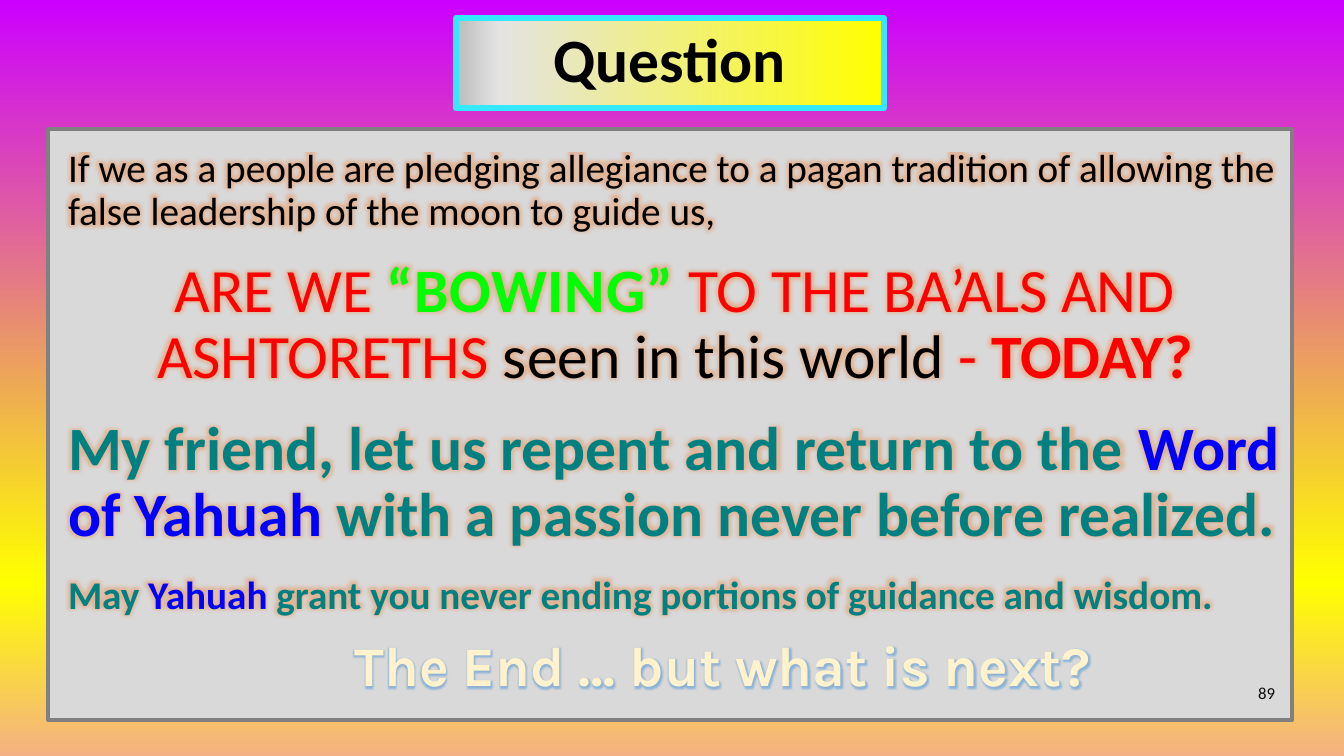
"""Build the closing question slide."""
import pptx
import pptx.util
import pptx.dml.color
import pptx.enum.shapes
import pptx.enum.text
import pptx.oxml
import pptx.oxml.ns

HUES = {
    "black": "000000", "red": "FF0000", "green": "00FF00", "teal": "008080",
    "blue": "0000FF", "cream": "FFF2CC", "ink": "0D0D0D", "panel": "D9D9D9",
    "edge": "808080", "cyan": "34E9FC", "yellow": "FFFF00", "pale": "E4E3E3",
    "silver": "BDBCBC", "violet": "CC00FF", "peach": "F4B183",
    "ember": "ED7D31", "sky": "5B9BD5",
}
ALIGN = pptx.enum.text.PP_ALIGN
ANCHOR = pptx.enum.text.MSO_ANCHOR
FIT = pptx.enum.text.MSO_AUTO_SIZE
NS = pptx.oxml.ns.nsdecls("a")

BODY = [
    (ALIGN.LEFT, 28, [
        ("If we as a people are pledging allegiance to a pagan tradition of "
         "allowing the false leadership of the moon to guide us,", "black", False)]),
    (ALIGN.CENTER, 44, [
        ("ARE WE ", "red", False),
        ("“BOWING” ", "green", True),
        ("TO THE BA’ALS AND ASHTORETHS ", "red", False),
        ("seen in this world", "black", False),
        (" - ", "red", False),
        ("TODAY?", "red", True)]),
    (ALIGN.LEFT, 44, [
        ("My friend, let us repent and return to the ", "teal", True),
        ("Word of Yahuah ", "blue", True),
        ("with a passion never before realized.", "teal", True)]),
    (ALIGN.LEFT, 28, [
        ("May ", "teal", True),
        ("Yahuah", "blue", True),
        (" grant you never ending portions of guidance and wisdom.", "teal", True)]),
]


def px(num):
    """Turn pixels into EMU."""
    return round(num * 914400 / 100.8)


def tint(name):
    """Give the named colour."""
    return pptx.dml.color.RGBColor.from_string(HUES[name])


def blend(fill, stops, angle):
    """Fill with a linear gradient of any number of stops."""
    fill.gradient()
    grad = fill._fill._gradFill
    marks = "".join(
        f'<a:gs pos="{pos * 1000}"><a:srgbClr val="{HUES[name]}"/></a:gs>'
        for pos, name in stops)
    new = pptx.oxml.parse_xml(
        f'<a:gradFill {NS} rotWithShape="1"><a:gsLst>{marks}</a:gsLst>'
        f'<a:lin ang="{angle * 60000}" scaled="0"/></a:gradFill>')
    grad[:] = list(new)


def place(shape, left, top, width, height):
    """Move and size a shape in pixels."""
    shape.left, shape.top = px(left), px(top)
    shape.width, shape.height = px(width), px(height)


def edge(shape, name, points):
    """Draw the border of a shape."""
    shape.line.color.rgb = tint(name)
    shape.line.width = pptx.util.Pt(points)


def add_run(para, text, size, name, bold=False, face="Calibri"):
    """Add one formatted run."""
    run = para.add_run()
    run.text = text
    run.font.size = pptx.util.Pt(size)
    run.font.name = face
    run.font.bold = bold
    run.font.color.rgb = tint(name)
    return run


def glow(run, name, points, alpha):
    """Put a soft glow round the letters."""
    props = run.font._element
    props.find(pptx.oxml.ns.qn("a:solidFill")).addnext(pptx.oxml.parse_xml(
        f'<a:effectLst {NS}><a:glow rad="{points * 12700}">'
        f'<a:srgbClr val="{HUES[name]}"><a:alpha val="{alpha * 1000}"/>'
        '</a:srgbClr></a:glow></a:effectLst>'))


def trace(run, name, points):
    """Outline and space out the letters."""
    props = run.font._element
    props.set("spc", "50")
    props.insert(0, pptx.oxml.parse_xml(
        f'<a:ln {NS} w="{round(points * 12700)}"><a:solidFill>'
        f'<a:srgbClr val="{HUES[name]}"/></a:solidFill></a:ln>'))


def add_title(slide):
    """Format the title box."""
    title = slide.shapes.title
    place(title, 456, 18, 428, 90)
    blend(title.fill, [(0, "yellow"), (90, "pale"), (100, "silver")], 180)
    edge(title, "cyan", 4.5)
    frame = title.text_frame
    frame.auto_size = FIT.NONE
    frame.vertical_anchor = ANCHOR.MIDDLE
    para = frame.paragraphs[0]
    para.alignment = ALIGN.CENTER
    para.line_spacing = 0.9
    add_run(para, "Question", 44, "black", True)


def add_panel(slide):
    """Add the grey panel and its paragraphs."""
    kind = pptx.enum.shapes.MSO_SHAPE.RECTANGLE
    panel = slide.shapes.add_shape(kind, 0, 0, 0, 0)
    place(panel, 48, 129, 1244, 591)
    panel.shadow.inherit = False
    panel.fill.solid()
    panel.fill.fore_color.rgb = tint("panel")
    edge(panel, "edge", 3)
    frame = panel.text_frame
    frame.word_wrap = True
    frame.vertical_anchor = ANCHOR.TOP
    frame.margin_left = frame.margin_top = px(20)
    frame.margin_right, frame.margin_bottom = px(10), px(5)
    for i, (align, size, runs) in enumerate(BODY):
        para = frame.add_paragraph() if i else frame.paragraphs[0]
        para.alignment = align
        para.line_spacing = 0.9
        para.space_after = pptx.util.Pt(18)
        for text, name, bold in runs:
            run = add_run(para, text, size, name, bold)
            glow(run, "ember", 5, 40)
            if name == "green":
                trace(run, "black", 0.75)


def add_note(slide, box, align, anchor, text, size, name, **font):
    """Add a one-line text box and return its run."""
    note = slide.shapes.add_textbox(0, 0, 0, 0)
    place(note, *box)
    frame = note.text_frame
    frame.word_wrap = True
    frame.vertical_anchor = anchor
    para = frame.paragraphs[0]
    para.alignment = align
    return add_run(para, text, size, name, **font)


def main():
    """Build and save the slide."""
    deck = pptx.Presentation()
    deck.slide_width, deck.slide_height = px(1344), px(756)
    slide = deck.slides.add_slide(deck.slide_layouts[5])
    blend(slide.background.fill,
          [(0, "violet"), (77, "yellow"), (100, "peach")], 90)
    add_title(slide)
    add_panel(slide)
    add_note(slide, (983, 673, 302, 40), ALIGN.RIGHT, ANCHOR.MIDDLE,
             "89", 12, "ink")
    close = add_note(slide, (237, 626, 971, 78), ALIGN.CENTER, ANCHOR.TOP,
                     "The End … but what is next?", 40, "cream",
                     bold=True, face="Karla")
    glow(close, "sky", 5, 60)
    deck.save("out.pptx")


if __name__ == "__main__":
    main()
